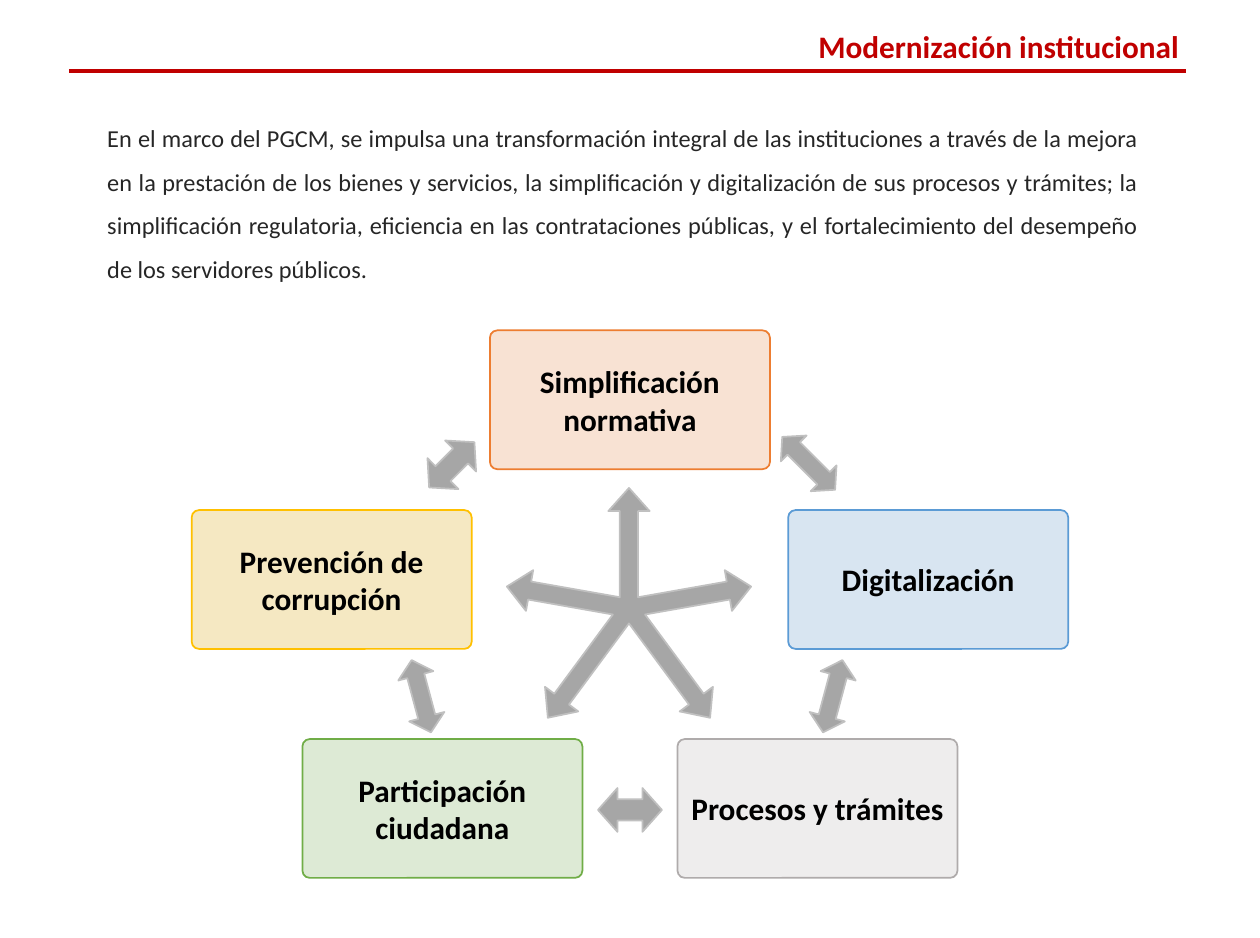
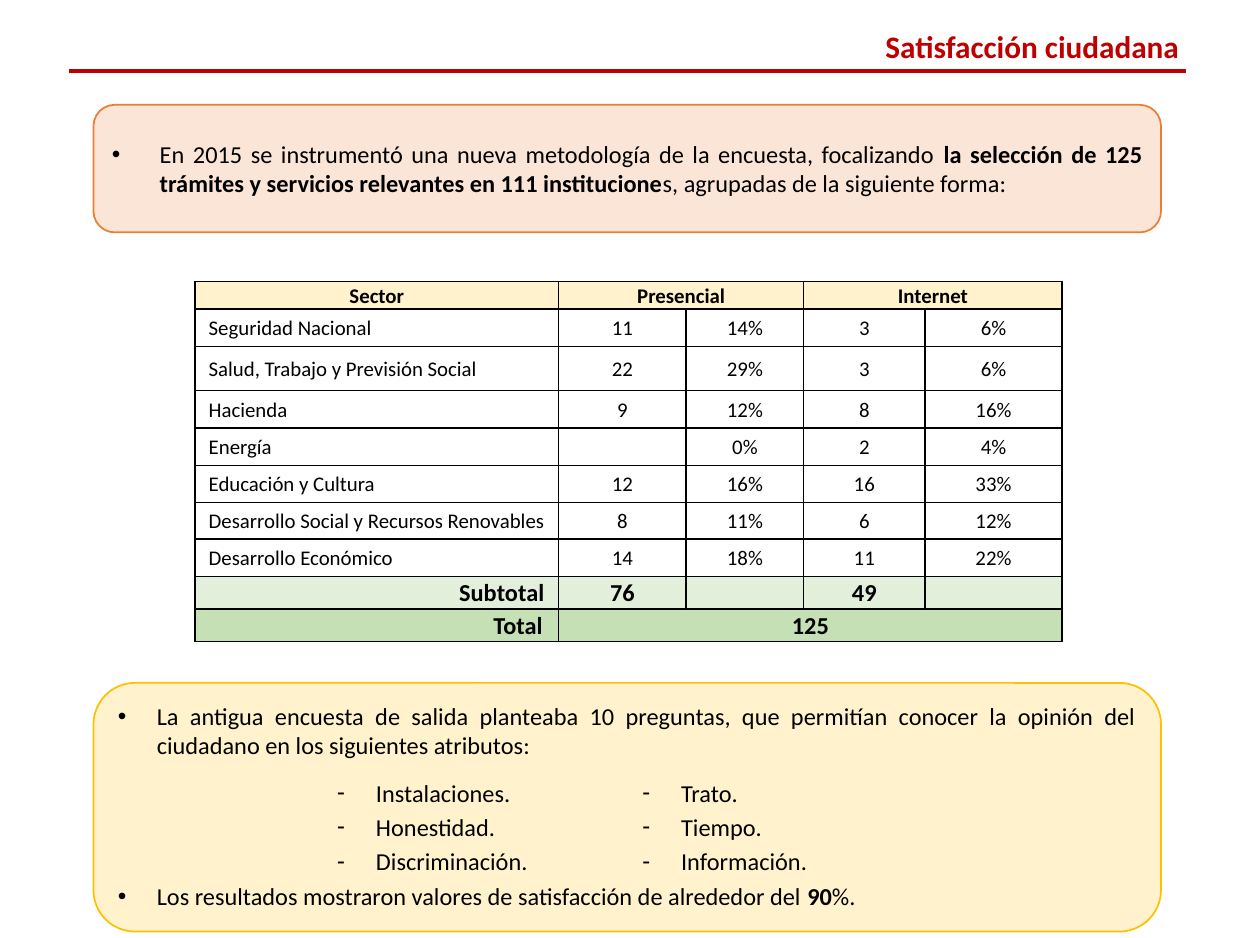
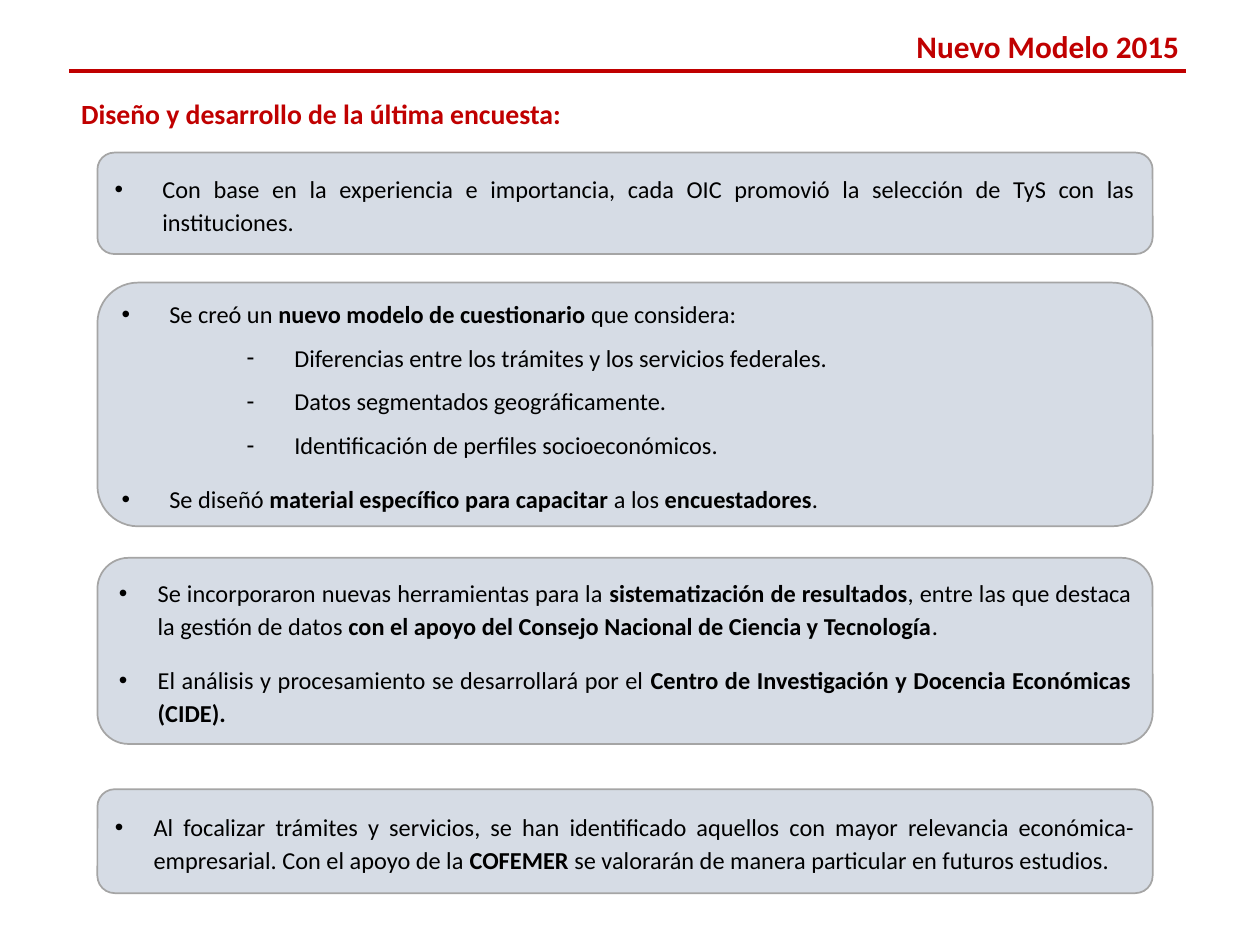
"""Build three slides on institutional modernisation."""
import math
from lxml import etree
from pptx import Presentation
from pptx import util as u
from pptx.dml.color import RGBColor
from pptx.enum import shapes as sh, text as tx
from pptx.oxml import ns

FONT = "Calibri"
HUES = {
    "red": "C00000", "black": "000000", "ink": "262626",
    "arrow": "A6A6A6", "rim": "C0C0C0",
    "peach": "FBE5D6", "orange": "ED7D31", "cream": "FFF2CC", "gold": "FFC000",
    "mist": "D6DCE5", "steel": "A5A5A5", "mint": "E2EFDA", "leaf": "C5E0B4",
    "rose": "F8E2D3", "sand": "F5E8C2", "sky": "D8E5F1", "blue": "5B9BD5",
    "sage": "DDEAD5", "green": "70AD47", "pale": "EEEDED", "gray": "AFABAB",
}
ALIGN = {"l": tx.PP_ALIGN.LEFT, "c": tx.PP_ALIGN.CENTER,
         "r": tx.PP_ALIGN.RIGHT, "j": tx.PP_ALIGN.JUSTIFY}
MID = tx.MSO_ANCHOR.MIDDLE
MID_X = 12.8


def rgb(name):
    """Return the colour that a name stands for."""
    return RGBColor.from_string(HUES[name])


def child(node, tag, **attrs):
    """Add a drawing element under a node."""
    return etree.SubElement(node, ns.qn("a:" + tag), **attrs)


def write(frame, line, size=14, hue="black", bold=False, align="l", left=0,
          hang=0, mark=None, lead=None, after=0):
    """Write one paragraph; asterisks switch bold on and off."""
    para = frame.paragraphs[0]
    if para.runs:
        para = frame.add_paragraph()
    para.alignment = ALIGN[align]
    para.space_after = u.Pt(after)
    if lead:
        para.line_spacing = lead
    props = para._p.get_or_add_pPr()
    props.set("marL", str(u.Cm(left)))
    props.set("indent", str(-u.Cm(hang)))
    if mark:
        child(props, "buFont", typeface="Arial" if mark == "•" else FONT)
        child(props, "buChar", char=mark)
    for i, part in enumerate(line.split("*")):
        if part:
            run = para.add_run()
            run.text = part
            run.font.name = FONT
            run.font.size = u.Pt(size)
            run.font.bold = bold or i % 2 == 1
            run.font.color.rgb = rgb(hue)
    if not line:
        child(para._p, "endParaRPr", sz=str(size * 100))


def paint(shape, fill, edge):
    """Give a shape its flat fill and thin outline."""
    shape.shadow.inherit = False
    shape.fill.solid()
    shape.fill.fore_color.rgb = rgb(fill)
    shape.line.color.rgb = rgb(edge)
    shape.line.width = u.Pt(1)


def label(slide, x, y, w, h):
    """Add a wrapping text box and return its frame."""
    frame = slide.shapes.add_textbox(u.Cm(x), u.Cm(y), u.Cm(w), u.Cm(h)).text_frame
    frame.word_wrap = True
    return frame


def panel(slide, x, y, w, h, fill, edge, curve=0.1667, anchor=MID):
    """Add a rounded panel and return its frame."""
    shape = slide.shapes.add_shape(
        sh.MSO_SHAPE.ROUNDED_RECTANGLE, u.Cm(x), u.Cm(y), u.Cm(w), u.Cm(h))
    shape.adjustments[0] = curve
    paint(shape, fill, edge)
    frame = shape.text_frame
    frame.word_wrap = True
    frame.vertical_anchor = anchor
    return frame


def page(deck, title):
    """Add a slide with its title and red rule."""
    slide = deck.slides.add_slide(deck.slide_layouts[6])
    rule = slide.shapes.add_connector(
        sh.MSO_CONNECTOR.STRAIGHT, u.Cm(1.4), u.Cm(1.45), u.Cm(24.1), u.Cm(1.45))
    rule.line.color.rgb = rgb("red")
    rule.line.width = u.Pt(2.25)
    child(rule._element.spPr, "effectLst")
    write(label(slide, 1.4, 0.43, 22.81, 1.02), title,
          size=18, hue="red", bold=True, align="r")
    return slide


def node(slide, dx, y, name, fill, edge):
    """Add a named box centred at an offset from the middle."""
    w, h = 5.69, 2.82
    frame = panel(slide, MID_X + dx - w / 2, y - h / 2, w, h, fill, edge, 0.053)
    frame.margin_left = frame.margin_right = 0
    frame.margin_top = frame.margin_bottom = 0
    write(frame, name, size=18, bold=True, align="c")


def arrow(slide, x, y, w, h, turn):
    """Add a two-headed arrow centred on a point."""
    shape = slide.shapes.add_shape(
        sh.MSO_SHAPE.LEFT_RIGHT_ARROW,
        u.Cm(x - w / 2), u.Cm(y - h / 2), u.Cm(w), u.Cm(h))
    shape.adjustments[0], shape.adjustments[1] = 0.483, 0.446
    shape.rotation = turn
    paint(shape, "arrow", "rim")


def star(slide, x, y, arms):
    """Draw arrows that leave one centre, given as (angle, length)."""
    half, wing, head = 0.185, 0.42, 0.47
    dots = []
    for i, (turn, size) in enumerate(arms):
        a = math.radians(turn)
        for out, side in ((size - head, -half), (size - head, -wing), (size, 0),
                          (size - head, wing), (size - head, half)):
            dots.append((x + out * math.cos(a) - side * math.sin(a),
                         y + out * math.sin(a) + side * math.cos(a)))
        gap = math.radians((arms[(i + 1) % len(arms)][0] - turn) % 360) / 2
        deep = half / math.sin(gap)
        dots.append((x + deep * math.cos(a + gap), y + deep * math.sin(a + gap)))
    dots = [(u.Cm(px), u.Cm(py)) for px, py in dots]
    path = slide.shapes.build_freeform(*dots[0])
    path.add_line_segments(dots[1:], close=True)
    paint(path.convert_to_shape(), "arrow", "rim")


def cell(box, line, fill=None, **form):
    """Fill one table cell and draw its borders."""
    box.margin_left = box.margin_right = box.margin_top = u.Cm(0.03)
    box.margin_bottom = 0
    box.vertical_anchor = MID
    props = box._tc.get_or_add_tcPr()
    for side in "LRTB":
        edge = child(props, "ln" + side, w=str(u.Pt(1)))
        child(child(edge, "solidFill"), "srgbClr", val=HUES["black"])
    if fill:
        box.fill.solid()
        box.fill.fore_color.rgb = rgb(fill)
    else:
        box.fill.background()
    write(box.text_frame, line, **form)


def grid(slide):
    """Add the table of procedures by sector."""
    rows = [
        ("Sector", "Presencial", "", "Internet", ""),
        ("Seguridad Nacional", "11", "14%", "3", "6%"),
        ("Salud, Trabajo y Previsión Social", "22", "29%", "3", "6%"),
        ("Hacienda", "9", "12%", "8", "16%"),
        ("Energía", "", "0%", "2", "4%"),
        ("Educación y Cultura", "12", "16%", "16", "33%"),
        ("Desarrollo Social y Recursos Renovables", "8", "11%", "6", "12%"),
        ("Desarrollo Económico", "14", "18%", "11", "22%"),
        ("Subtotal", "76", "", "49", ""),
        ("Total", "125", "", "", ""),
    ]
    wide = [7.39, 2.59, 2.39, 2.46, 2.79]
    tall = [0.56, 0.76, 0.89, 0.76, 0.76, 0.76, 0.74, 0.76, 0.66, 0.66]
    looks = {0: ("cream", 12, 0), 8: ("mint", 14, 5.08), 9: ("leaf", 14, 5.74)}
    table = slide.shapes.add_table(
        len(rows), len(wide), u.Cm(3.96), u.Cm(5.72),
        u.Cm(sum(wide)), u.Cm(sum(tall))).table
    table.first_row = table.horz_banding = False
    for col, w in zip(table.columns, wide):
        col.width = u.Cm(w)
    for row, h in zip(table.rows, tall):
        row.height = u.Cm(h)
    for r, row in enumerate(rows):
        fill, size, left = looks.get(r, (None, 12, 0.25))
        for c, line in enumerate(row):
            cell(table.cell(r, c), line, fill, size=size, bold=r in looks,
                 align="l" if c == 0 and r not in looks else "c",
                 left=0 if c else left)
    for r, start, end in ((0, 1, 2), (0, 3, 4), (9, 1, 4)):
        table.cell(r, start).merge(table.cell(r, end))


def reform(deck):
    """Build the slide on modernisation."""
    slide = page(deck, "Modernización institucional")
    for item in (
            (-6.06, 11.77, "Prevención de corrupción", "sand", "gold"),
            (0, 8.12, "Simplificación normativa", "rose", "orange"),
            (6.06, 11.77, "Digitalización", "sky", "blue"),
            (-3.81, 16.42, "Participación ciudadana", "sage", "green"),
            (3.81, 16.42, "Procesos y trámites", "pale", "gray")):
        node(slide, *item)
    slim, stout = (1.52, 0.74), (1.3, 0.89)
    for x, y, size, turn in (
            (8.56, 14.14, slim, 255), (16.92, 14.14, slim, 285),
            (MID_X, 16.45, stout, 0), (9.18, 9.44, stout, 315),
            (16.43, 9.41, slim, 225)):
        arrow(slide, x, y, *size, turn)
    star(slide, 12.78, 12.35,
         [(-90, 2.44), (-10, 2.52), (53.5, 2.77), (126.5, 2.77), (190, 2.52)])
    write(label(slide, 1.19, 2.08, 22.2, 4.75),
          "En el marco del PGCM, se impulsa una transformación integral de las "
          "instituciones a través de la mejora en la prestación de los bienes y "
          "servicios, la simplificación y digitalización de sus procesos y trámites; "
          "la simplificación regulatoria, eficiencia en las contrataciones públicas, "
          "y el fortalecimiento del desempeño de los servidores públicos.",
          hue="ink", align="j", left=0.74, lead=1.5)


def survey(deck):
    """Build the slide on satisfaction."""
    slide = page(deck, "Satisfacción ciudadana")
    write(panel(slide, 1.9, 2.13, 21.69, 2.59, "peach", "orange"),
          "En 2015 se instrumentó una nueva metodología de la encuesta, focalizando "
          "*la selección de 125 trámites y servicios relevantes en 111 institucione*s, "
          "agrupadas de la siguiente forma:",
          align="j", left=0.97, hang=0.97, mark="•", after=12)
    grid(slide)
    frame = panel(slide, 1.9, 13.87, 21.69, 5.05, "cream", "gold",
                  anchor=tx.MSO_ANCHOR.TOP)
    dent = dict(left=0.79, hang=0.79)
    write(frame, "La antigua encuesta de salida planteaba 10 preguntas, que permitían "
          "conocer la opinión del ciudadano en los siguientes atributos:",
          align="j", mark="•", after=70, **dent)
    write(frame, "Los resultados mostraron valores de satisfacción de alrededor "
          "del *90*%.", align="j", mark="•", **dent)
    for x, names in ((12.8, ("Trato.", "Tiempo.", "Información.")),
                     (6.6, ("Instalaciones.", "Honestidad.", "Discriminación."))):
        frame = label(slide, x, 15.67, 6.2, 2.26)
        for name in names:
            write(frame, name, mark="‐", after=3, **dent)


def model(deck):
    """Build the slide on the new survey."""
    slide = page(deck, "Nuevo Modelo 2015")
    write(label(slide, 1.4, 1.85, 22.81, 0.94),
          "Diseño y desarrollo de la última encuesta:", size=16, hue="red", bold=True)
    far = dict(left=0.97, hang=0.97, mark="•")
    near = dict(left=0.79, hang=0.79, mark="•")
    deep = dict(left=3.51, hang=0.97, mark="‐")
    for y, h, lines in (
            (3.1, 2.06, [
                ("Con base en la experiencia e importancia, cada OIC promovió la "
                 "selección de TyS con las instituciones.", 12, far)]),
            (5.74, 4.95, [
                ("Se creó un *nuevo modelo de cuestionario *que considera:", 6, far),
                ("Diferencias entre los trámites y los servicios federales.", 6, deep),
                ("Datos segmentados geográficamente.", 6, deep),
                ("Identificación de perfiles socioeconómicos.", 12, deep),
                ("Se diseñó *material específico para capacitar* a los "
                 "*encuestadores*.", 6, far)]),
            (11.33, 3.78, [
                ("Se incorporaron nuevas herramientas para la *sistematización de "
                 "resultados*, entre las que destaca la gestión de datos *con el apoyo "
                 "del Consejo Nacional de Ciencia y Tecnología*.", 12, near),
                ("El análisis y procesamiento se desarrollará por el *Centro de "
                 "Investigación y Docencia Económicas (CIDE).*", 12, near)]),
            (16.03, 2.11, [
                ("Al focalizar trámites y servicios, se han identificado aquellos con "
                 "mayor relevancia económica-empresarial. Con el apoyo de la *COFEMER "
                 "*se valorarán de manera particular en futuros estudios.", 12, near)])):
        frame = panel(slide, 1.98, y, 21.44, h, "mist", "steel")
        for line, after, form in lines:
            write(frame, line, align="j", lead=1.14, after=after, **form)


def main():
    """Build and save the deck."""
    deck = Presentation()
    deck.slide_width, deck.slide_height = u.Cm(25.6), u.Cm(19.05)
    for build in (reform, survey, model):
        build(deck)
    deck.save("out.pptx")


if __name__ == "__main__":
    main()
